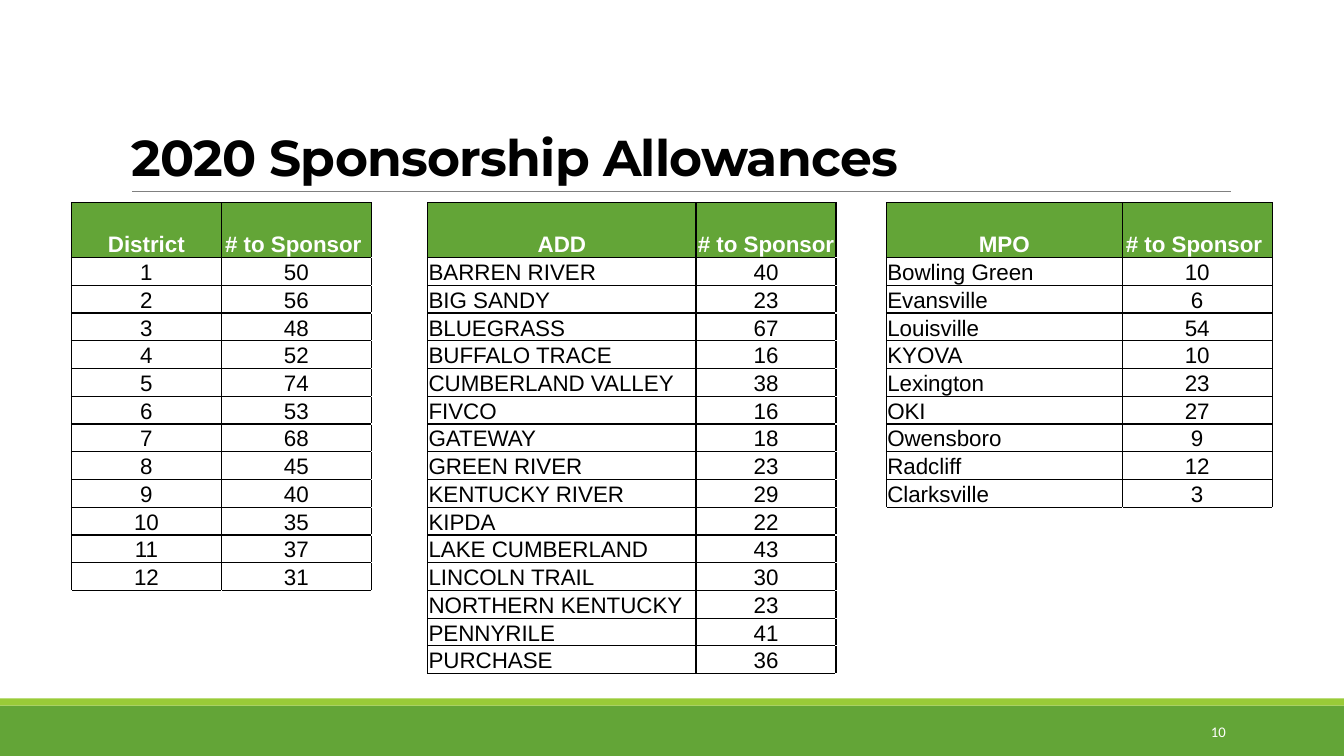
import dataclasses

import lxml.etree
import pptx
import pptx.dml.color
import pptx.enum.shapes
import pptx.enum.text
import pptx.oxml.ns
import pptx.presentation
import pptx.shapes.autoshape
import pptx.slide
import pptx.table
import pptx.text.text
import pptx.util

Cm = pptx.util.Cm
Pt = pptx.util.Pt
RGBColor = pptx.dml.color.RGBColor
Align = pptx.enum.text.PP_ALIGN
Anchor = pptx.enum.text.MSO_ANCHOR

GREEN = RGBColor(0x63, 0xA5, 0x37)
LIME = RGBColor(0x99, 0xCB, 0x38)
GRAY = RGBColor(0x80, 0x80, 0x80)
BLACK = RGBColor(0, 0, 0)
WHITE = RGBColor(255, 255, 255)

HEADER_HEIGHT = Cm(1.38)
ROW_HEIGHT = Cm(0.7)
CELL_INSET = Cm(0.02)


@dataclasses.dataclass(frozen=True)
class Band:
    top: float
    height: float
    color: RGBColor


@dataclasses.dataclass(frozen=True)
class Allowance:
    heading: str
    name_width: float
    count_width: float
    gap_after: float
    name_align: Align
    rows: list[tuple[str, int]]


BANDS = [Band(17.78, 1.27, GREEN), Band(17.6, 0.18, LIME)]

DISTRICT_COUNTS = [50, 56, 48, 52, 74, 53, 68, 45, 40, 35, 37, 31]

ALLOWANCES = [
    Allowance("District", 3.78, 3.78, 1.42, Align.CENTER,
              [(str(number), count) for number, count in enumerate(DISTRICT_COUNTS, 1)]),
    Allowance("ADD", 6.76, 3.53, 1.27, Align.LEFT, [
        ("BARREN RIVER", 40), ("BIG SANDY", 23), ("BLUEGRASS", 67),
        ("BUFFALO TRACE", 16), ("CUMBERLAND VALLEY", 38), ("FIVCO", 16),
        ("GATEWAY", 18), ("GREEN RIVER", 23), ("KENTUCKY RIVER", 29),
        ("KIPDA", 22), ("LAKE CUMBERLAND", 43), ("LINCOLN TRAIL", 30),
        ("NORTHERN KENTUCKY", 23), ("PENNYRILE", 41), ("PURCHASE", 36)]),
    Allowance("MPO", 5.94, 3.78, 0, Align.LEFT, [
        ("Bowling Green", 10), ("Evansville", 6), ("Louisville", 54),
        ("KYOVA", 10), ("Lexington", 23), ("OKI", 27),
        ("Owensboro", 9), ("Radcliff", 12), ("Clarksville", 3)]),
]


def set_font(para: pptx.text.text._Paragraph, name: str, size: float,
             color: RGBColor, bold: bool = False) -> None:
    para.font.name = name
    para.font.size = Pt(size)
    para.font.bold = bold
    para.font.color.rgb = color


def add_band(page: pptx.slide.Slide, band: Band, width: int) -> None:
    box = page.shapes.add_shape(pptx.enum.shapes.MSO_SHAPE.RECTANGLE,
                                0, Cm(band.top), width, Cm(band.height))
    box.shadow.inherit = False
    box.fill.solid()
    box.fill.fore_color.rgb = band.color
    box.line.fill.background()


def add_title_rule(page: pptx.slide.Slide) -> None:
    rule = page.shapes.add_connector(pptx.enum.shapes.MSO_CONNECTOR.STRAIGHT,
                                     Cm(3.33), Cm(4.83), Cm(31.01), Cm(4.83))
    rule.line.color.rgb = GRAY
    rule.line.width = Pt(0.5)
    lxml.etree.SubElement(rule._element.spPr, pptx.oxml.ns.qn("a:effectLst"))


def set_title(page: pptx.slide.Slide, text: str) -> None:
    title = page.shapes.title
    title.left, title.top, title.width, title.height = Cm(3.05), Cm(0.79), Cm(27.94), Cm(4.04)
    title.text = text
    frame = title.text_frame
    frame.auto_size = pptx.enum.text.MSO_AUTO_SIZE.NONE
    frame.vertical_anchor = Anchor.BOTTOM
    para = frame.paragraphs[0]
    para.alignment = Align.LEFT
    para.line_spacing = 0.85
    set_font(para, "Montserrat", 36, BLACK, bold=True)
    para._p.pPr.find(pptx.oxml.ns.qn("a:defRPr")).set("spc", "-50")


def add_page_number(page: pptx.slide.Slide, text: str) -> None:
    box = page.shapes.add_textbox(Cm(27.51), Cm(17.93), Cm(3.63), Cm(1.02))
    frame = box.text_frame
    frame.word_wrap = True
    frame.vertical_anchor = Anchor.MIDDLE
    frame.text = text
    para = frame.paragraphs[0]
    para.alignment = Align.RIGHT
    set_font(para, "Calibri", 10.5, WHITE)


def set_border(cell: pptx.table._Cell, side: str, color: RGBColor) -> None:
    qn = pptx.oxml.ns.qn
    line = lxml.etree.SubElement(cell._tc.get_or_add_tcPr(), qn(f"a:ln{side}"), w=str(Pt(1)))
    fill = lxml.etree.SubElement(line, qn("a:solidFill"))
    lxml.etree.SubElement(fill, qn("a:srgbClr"), val=str(color))


def fill_cell(cell: pptx.table._Cell, text: str, align: Align, header: bool) -> None:
    cell.margin_left = cell.margin_right = cell.margin_top = CELL_INSET
    cell.margin_bottom = 0
    cell.vertical_anchor = Anchor.BOTTOM
    cell.text = text
    para = cell.text_frame.paragraphs[0]
    para.alignment = align
    set_font(para, "Arial", 16, WHITE if header else BLACK, bold=header)
    if header and text:
        cell.fill.solid()
        cell.fill.fore_color.rgb = GREEN
    else:
        cell.fill.background()


def add_allowance_table(page: pptx.slide.Slide, allowances: list[Allowance]) -> None:
    # Lay the groups side by side, with an empty column between them
    widths: list[float] = []
    aligns: list[Align] = []
    texts: dict[tuple[int, int], str] = {}
    for group in allowances:
        first = len(widths)
        lines = [(group.heading, "# to Sponsor "), *group.rows]
        for row, (name, count) in enumerate(lines):
            texts[row, first] = name
            texts[row, first + 1] = str(count)
        widths += [group.name_width, group.count_width]
        aligns += [group.name_align, Align.CENTER]
        if group.gap_after:
            widths.append(group.gap_after)
            aligns.append(Align.LEFT)

    row_count = 1 + max(len(group.rows) for group in allowances)
    height = HEADER_HEIGHT + (row_count - 1) * ROW_HEIGHT
    table = page.shapes.add_table(row_count, len(widths), Cm(1.8), Cm(5.11),
                                  Cm(sum(widths)), height).table
    table.horz_banding = False
    for column, width in zip(table.columns, widths):
        column.width = Cm(width)
    for index, table_row in enumerate(table.rows):
        table_row.height = ROW_HEIGHT if index else HEADER_HEIGHT

    # An edge is black where it touches a cell with text
    neighbours = {"L": (0, -1), "R": (0, 1), "T": (-1, 0), "B": (1, 0)}
    for row in range(row_count):
        for col, align in enumerate(aligns):
            cell = table.cell(row, col)
            for side, (down, across) in neighbours.items():
                touches = (row, col) in texts or (row + down, col + across) in texts
                set_border(cell, side, BLACK if touches else WHITE)
            header = row == 0
            fill_cell(cell, texts.get((row, col), ""), Align.CENTER if header else align, header)


def main() -> None:
    deck = pptx.Presentation()
    deck.slide_width, deck.slide_height = Cm(33.87), Cm(19.05)
    page = deck.slides.add_slide(deck.slide_layouts[5])

    # Footer bands and title
    for band in BANDS:
        add_band(page, band, deck.slide_width)
    add_title_rule(page)
    set_title(page, "2020 Sponsorship Allowances")
    add_page_number(page, "10")

    # Sponsorship counts
    add_allowance_table(page, ALLOWANCES)
    deck.save("out.pptx")


if __name__ == "__main__":
    main()
